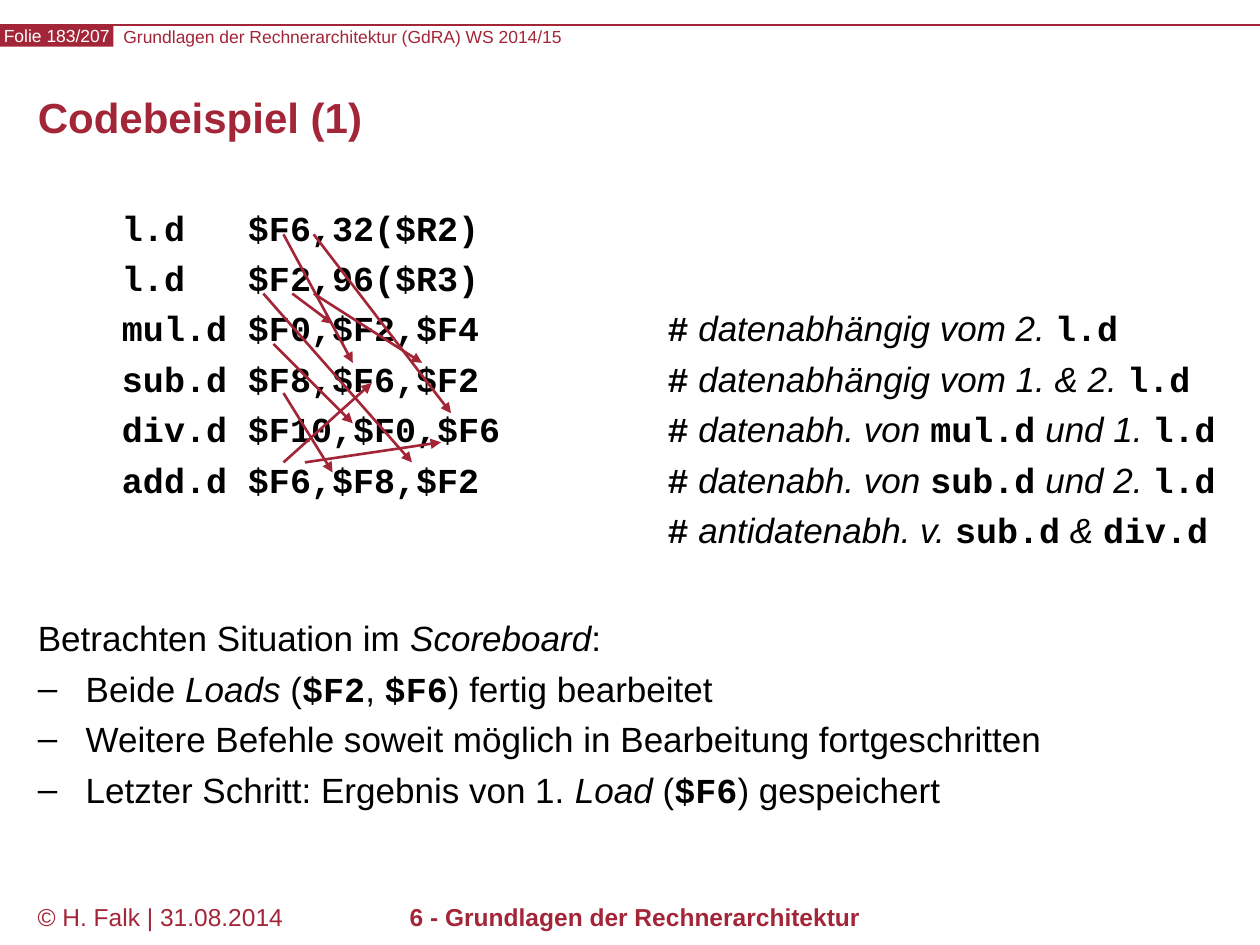
from lxml.etree import SubElement
from pptx import Presentation
from pptx.dml.color import RGBColor
from pptx.enum.shapes import MSO_CONNECTOR, MSO_SHAPE
from pptx.enum.text import MSO_ANCHOR, MSO_AUTO_SIZE, PP_ALIGN
from pptx.oxml.ns import qn
from pptx.util import Inches, Pt

ACCENT, BLACK, WHITE = "A32638", "000000", "FFFFFF"
SANS, MONO = "Arial", "Courier New"
BULLET_INDENT = 0.38
CODE_LEFT, REMARK_LEFT = 0.87, 5.2
CODE_TOP, ROW = 1.52, 0.4

HEADING = "Codebeispiel (1)"
COURSE = "Grundlagen der Rechnerarchitektur (GdRA) WS 2014/15"
PAGE = "Folie 183/207"
AUTHOR = "© H. Falk | 31.08.2014"
CHAPTER = "6 - Grundlagen der Rechnerarchitektur"

PROGRAM = [
    ("l.d", "$F6,32($R2)"),
    ("l.d", "$F2,96($R3)"),
    ("mul.d", "$F0,$F2,$F4"),
    ("sub.d", "$F8,$F6,$F2"),
    ("div.d", "$F10,$F0,$F6"),
    ("add.d", "$F6,$F8,$F2"),
]
FIRST_REMARK_ROW = 2
REMARKS = [
    "`#`* datenabhängig vom 2. *`l.d`",
    "`#`* datenabhängig vom 1. & 2. *`l.d`",
    "`#`* datenabh. von *`mul.d`* und 1. *`l.d`",
    "`#`* datenabh. von *`sub.d`* und 2. *`l.d`",
    "`#`* antidatenabh. v. *`sub.d`* & *`div.d`",
]
SITUATION = "Betrachten Situation im *Scoreboard*:"
STEPS = [
    "Beide *Loads* (`$F2`, `$F6`) fertig bearbeitet",
    "Weitere Befehle soweit möglich in Bearbeitung fortgeschritten",
    "Letzter Schritt: Ergebnis von 1. *Load* (`$F6`) gespeichert",
]
DEPENDENCIES = [
    ((2.25, 1.86), (2.8, 2.88)),
    ((2.09, 2.33), (3.27, 3.67)),
    ((2.32, 2.33), (2.64, 2.57)),
    ((2.49, 2.33), (3.35, 2.88)),
    ((2.25, 3.12), (2.64, 3.75)),
    ((2.25, 3.67), (2.95, 3.04)),
    ((2.42, 3.67), (3.5, 3.51)),
    ((2.17, 2.73), (2.8, 3.36)),
    ((2.49, 1.86), (3.58, 3.28)),
]


def color(value):
    return RGBColor.from_string(value)


def write(paragraph, text, size=20, ink=BLACK, bold=False, align=PP_ALIGN.LEFT,
          spacing=None):
    paragraph.alignment = align
    paragraph.space_before = Pt(0)
    if spacing:
        paragraph.line_spacing = spacing
    for i, section in enumerate(text.split("`")):
        code = i % 2 == 1
        for j, words in enumerate(section.split("*")):
            if words:
                run = paragraph.add_run()
                run.text = words
                run.font.name = MONO if code else SANS
                run.font.size = Pt(size)
                run.font.bold = bold or code
                run.font.italic = j % 2 == 1
                run.font.color.rgb = color(ink)


def write_lines(frame, lines, **style):
    for i, text in enumerate(lines):
        paragraph = frame.add_paragraph() if i else frame.paragraphs[0]
        write(paragraph, text, **style)


def place(part, left, top, width, height):
    part.left, part.top = Inches(left), Inches(top)
    part.width, part.height = Inches(width), Inches(height)


def set_frame(part, anchor=MSO_ANCHOR.TOP, wrap=True, inset=None):
    frame = part.text_frame
    frame.word_wrap = wrap
    frame.auto_size = MSO_AUTO_SIZE.NONE
    frame.vertical_anchor = anchor
    if inset is not None:
        frame.margin_left = frame.margin_right = Inches(inset)
        frame.margin_top = frame.margin_bottom = Inches(inset)
    return frame


def add_label(slide, box, lines, inset=None, **style):
    label = slide.shapes.add_textbox(*map(Inches, box))
    write_lines(set_frame(label, inset=inset), lines, **style)


def add_line(slide, start, end, weight, arrow=False):
    line = slide.shapes.add_connector(
        MSO_CONNECTOR.STRAIGHT, *map(Inches, start + end))
    line.line.color.rgb = color(ACCENT)
    line.line.width = Pt(weight)
    if arrow:
        SubElement(line.line._get_or_add_ln(), qn("a:tailEnd"), type="triangle")
    SubElement(line._element.spPr, qn("a:effectLst"))


def set_bullet(paragraph, bullet=None):
    props = paragraph._p.get_or_add_pPr()
    indent = Inches(BULLET_INDENT) if bullet else 0
    props.set("marL", str(indent))
    props.set("indent", str(-indent))
    if bullet:
        SubElement(props, qn("a:buFont"), typeface=SANS)
        SubElement(props, qn("a:buChar"), char=bullet)
    else:
        SubElement(props, qn("a:buNone"))


def main():
    deck = Presentation()
    deck.slide_width, deck.slide_height = Inches(10), Inches(7.5)
    slide = deck.slides.add_slide(deck.slide_layouts[1])
    heading, body = slide.shapes.title, slide.placeholders[1]

    add_line(slide, (0, 0.2), (10, 0.2), 1)
    add_label(slide, (0.98, 0.21, 6.6, 0.17), [COURSE], inset=0, size=10, ink=ACCENT)
    badge = slide.shapes.add_shape(
        MSO_SHAPE.RECTANGLE, 0, Inches(0.2), Inches(0.9), Inches(0.17))
    badge.shadow.inherit = False
    badge.fill.solid()
    badge.fill.fore_color.rgb = color(ACCENT)
    badge.line.fill.background()
    write(set_frame(badge, wrap=False, inset=0).paragraphs[0], PAGE,
          size=10, ink=WHITE, align=PP_ALIGN.CENTER)

    add_label(slide, (0.2, 7.11, 2.2, 0.39), [AUTHOR], size=14, ink=ACCENT)
    add_label(slide, (2.01, 7.11, 6.06, 0.39), [CHAPTER], size=14, ink=ACCENT,
              bold=True, align=PP_ALIGN.CENTER)

    place(heading, 0.2, 0.6, 9.61, 0.72)
    write(set_frame(heading, MSO_ANCHOR.MIDDLE).paragraphs[0], HEADING,
          size=24, ink=ACCENT, bold=True, spacing=Pt(24))

    code_lines = [f"`{operation}`\t`{operands}`" for operation, operands in PROGRAM]
    add_label(slide, (CODE_LEFT, CODE_TOP, 4.2, ROW * len(PROGRAM) + 0.1),
              code_lines, spacing=1.2)
    add_label(slide, (REMARK_LEFT, CODE_TOP + ROW * FIRST_REMARK_ROW,
                      10 - REMARK_LEFT, ROW * len(REMARKS) + 0.1),
              REMARKS, spacing=1.2)

    place(body, 0.2, 4.78, 9.61, 2.2)
    prose = set_frame(body)
    write_lines(prose, [SITUATION] + STEPS, spacing=1.2)
    for i, paragraph in enumerate(prose.paragraphs):
        set_bullet(paragraph, "–" if i else None)

    for start, end in DEPENDENCIES:
        add_line(slide, start, end, 1.5, arrow=True)
    deck.save("out.pptx")


if __name__ == "__main__":
    main()
